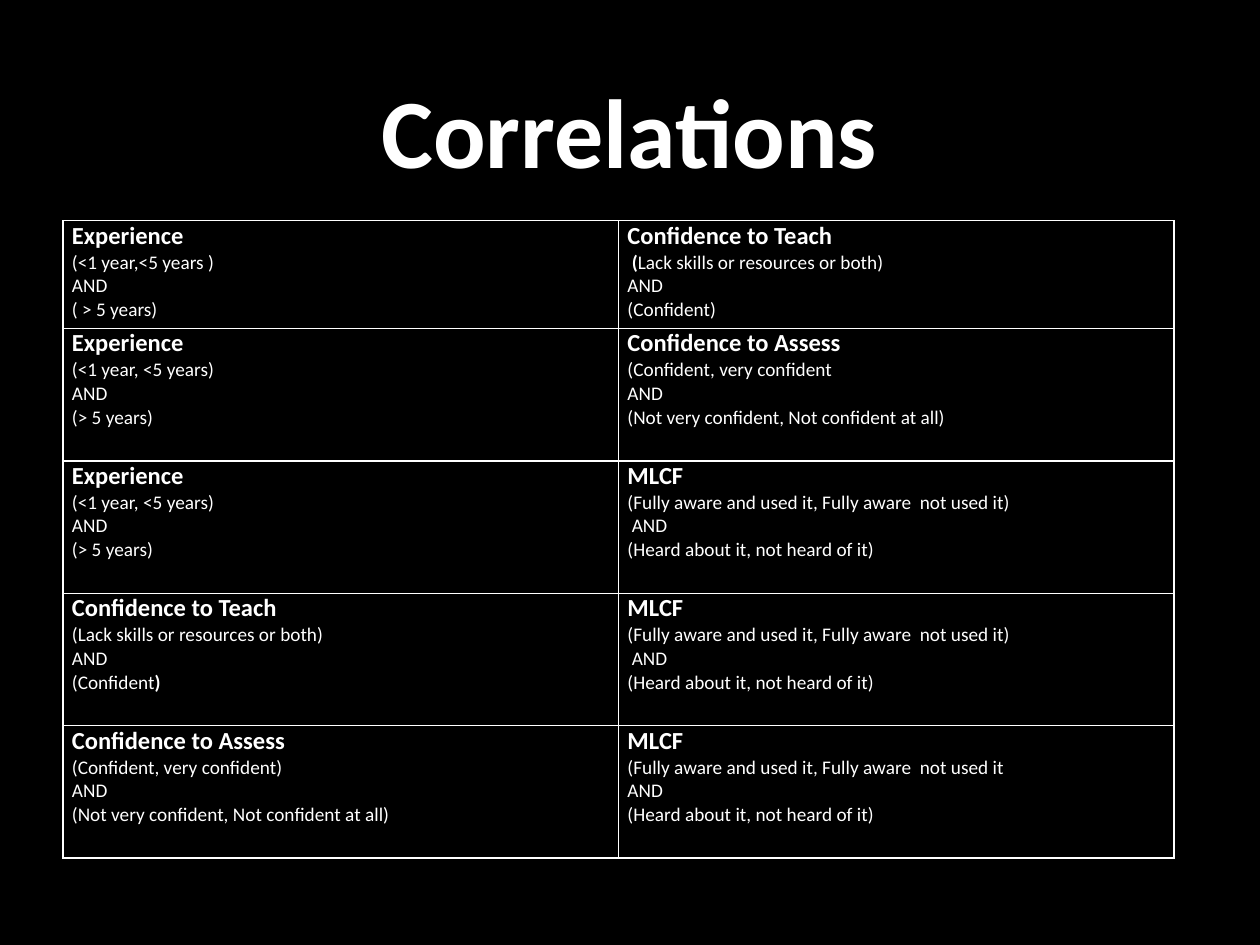
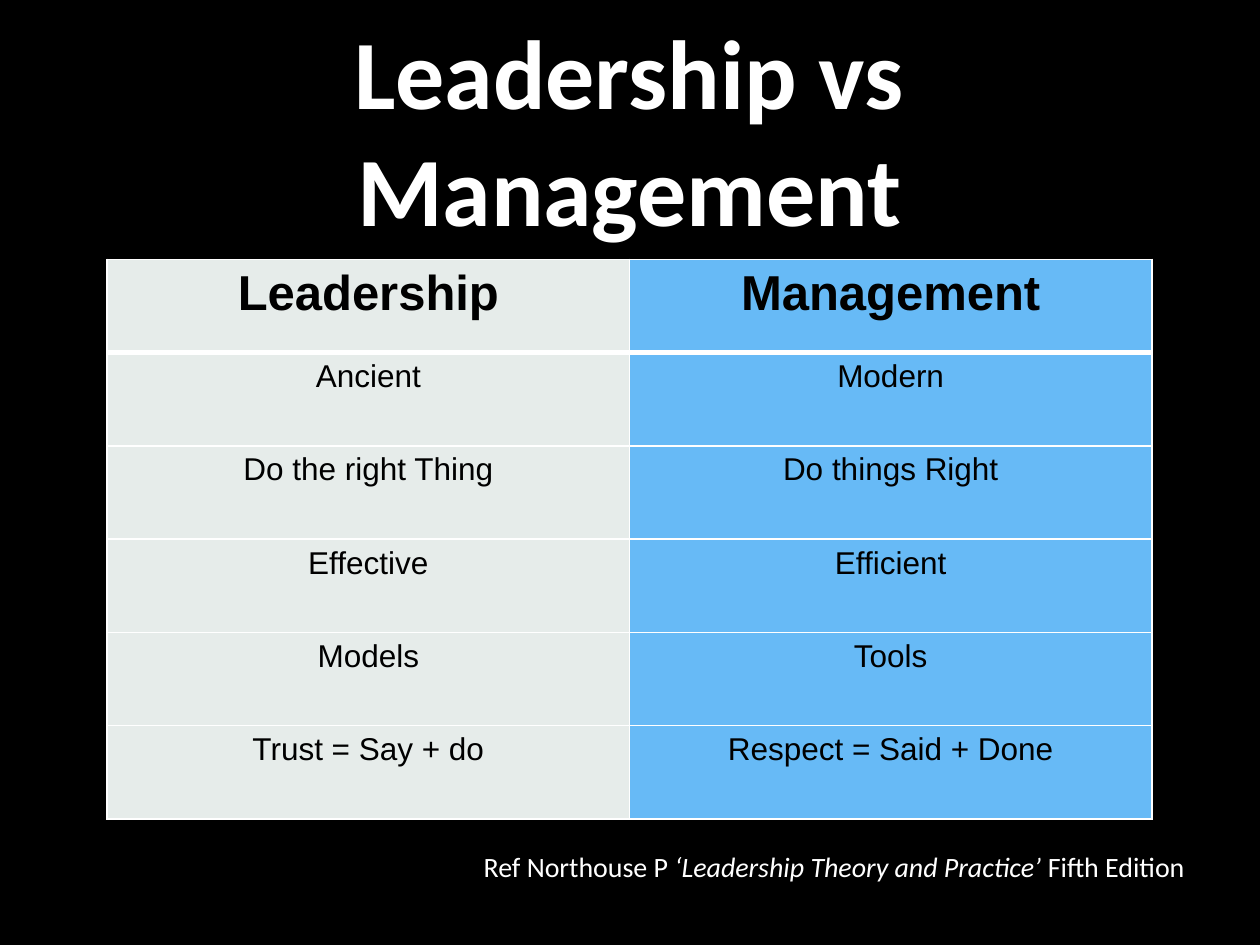
from pptx import Presentation
from pptx.dml.color import RGBColor
from pptx.enum.text import MSO_ANCHOR, PP_ALIGN
from pptx.oxml import parse_xml
from pptx.oxml.ns import nsdecls
from pptx.util import Cm, Pt

# Shared style
BLACK, WHITE = "000000", "FFFFFF"
COLUMN_FILLS = ["E6ECEA", "67BAF6"]

# Content: each correlation cell is a heading and its lines;
# a line is a string, or a list of (text, bold) pieces
EXPERIENCE = ["Experience", "(<1 year, <5 years)", "AND", "(> 5 years)"]
MLCF = ["MLCF", "(Fully aware and used it, Fully aware  not used it)", " AND",
        "(Heard about it, not heard of it)"]
CORRELATIONS = [
    (["Experience", "(<1 year,<5 years )", "AND", "( > 5 years)"],
     ["Confidence to Teach",
      [(" (", True), ("Lack skills or resources or both)", False)],
      "AND", "(Confident)"]),
    (EXPERIENCE,
     ["Confidence to Assess", "(Confident, very confident", "AND",
      "(Not very confident, Not confident at all)"]),
    (EXPERIENCE, MLCF),
    (["Confidence to Teach", "(Lack skills or resources or both)", "AND",
      [("(Confident", False), (")", True)]],
     MLCF),
    (["Confidence to Assess", "(Confident, very confident)", "AND",
      "(Not very confident, Not confident at all)"],
     ["MLCF", "(Fully aware and used it, Fully aware  not used it", "AND",
      "(Heard about it, not heard of it)"]),
]
COMPARISON = [
    ("Leadership", "Management"),
    ("Ancient", "Modern"),
    ("Do the right Thing", "Do things Right"),
    ("Effective", "Efficient"),
    ("Models", "Tools"),
    ("Trust = Say + do", "Respect = Said + Done"),
]
REFERENCE = [("Ref Northouse P ", False),
             ("‘Leadership Theory and Practice’ ", True),
             ("Fifth Edition", False)]


def color(hex_code):
    return RGBColor.from_string(hex_code)


def add_run(paragraph, text, size, font="Calibri", ink=WHITE, bold=False, italic=False):
    run = paragraph.add_run()
    run.text = text
    run.font.size, run.font.name = Pt(size), font
    run.font.bold, run.font.italic = bold, italic
    run.font.color.rgb = color(ink)


def add_titled_slide(deck, title):
    slide = deck.slides.add_slide(deck.slide_layouts[6])
    slide.background.fill.solid()
    slide.background.fill.fore_color.rgb = color(BLACK)
    frame = slide.shapes.add_textbox(Cm(2.16), Cm(0.3), Cm(21.06), Cm(4.6)).text_frame
    frame.word_wrap = True
    frame.vertical_anchor = MSO_ANCHOR.MIDDLE
    paragraph = frame.paragraphs[0]
    paragraph.alignment = PP_ALIGN.CENTER
    add_run(paragraph, title, 56, bold=True)
    return slide


def add_grid(slide, left, top, column_width, row_heights):
    table = slide.shapes.add_table(len(row_heights), 2, left, top,
                                   2 * column_width, sum(row_heights)).table
    table.first_row = table.horz_banding = False
    for column in table.columns:
        column.width = column_width
    for row, height in zip(table.rows, row_heights):
        row.height = height
    return table


def set_margins(cell, side, end):
    cell.margin_left = cell.margin_right = Cm(side)
    cell.margin_top = cell.margin_bottom = Cm(end)


def set_borders(cell, top=1, bottom=1):
    """Draw white borders; the line elements go before the cell fill."""
    widths = {"lnL": 1, "lnR": 1, "lnT": top, "lnB": bottom}
    for place, (edge, width) in enumerate(widths.items()):
        line = parse_xml(
            f'<a:{edge} {nsdecls("a")} w="{Pt(width)}"><a:solidFill>'
            f'<a:srgbClr val="{WHITE}"/></a:solidFill></a:{edge}>')
        cell._tc.get_or_add_tcPr().insert(place, line)


def build_correlations(deck):
    slide = add_titled_slide(deck, "Correlations")
    heights = [Cm(2.17)] + [Cm(2.67)] * (len(CORRELATIONS) - 1)
    table = add_grid(slide, Cm(1.27), Cm(4.45), Cm(11.2), heights)
    for r, pair in enumerate(CORRELATIONS):
        for c, (heading, *lines) in enumerate(pair):
            cell = table.cell(r, c)
            set_margins(cell, 0.18, 0)
            cell.fill.background()
            set_borders(cell)
            frame = cell.text_frame
            add_run(frame.paragraphs[0], heading, 14, bold=True)
            for line in lines:
                paragraph = frame.add_paragraph()
                pieces = [(line, False)] if isinstance(line, str) else line
                for text, bold in pieces:
                    add_run(paragraph, text, 11, bold=bold)


def build_comparison(deck):
    slide = add_titled_slide(deck, "Leadership vs Management")
    table = add_grid(slide, Cm(2.16), Cm(5.23), Cm(10.53), [Cm(1.88)] * len(COMPARISON))
    for r, pair in enumerate(COMPARISON):
        header = r == 0
        for c, text in enumerate(pair):
            cell = table.cell(r, c)
            set_margins(cell, 0.24, 0.13)
            cell.fill.solid()
            cell.fill.fore_color.rgb = color(COLUMN_FILLS[c])
            set_borders(cell, top=3 if r == 1 else 1, bottom=3 if header else 1)
            paragraph = cell.text_frame.paragraphs[0]
            paragraph.alignment = PP_ALIGN.CENTER
            add_run(paragraph, text, 28 if header else 18, "Arial", BLACK, bold=header)

    # Reference line
    frame = slide.shapes.add_textbox(Cm(9.3), Cm(17), Cm(14.83), Cm(0.94)).text_frame
    frame.word_wrap = False
    paragraph = frame.paragraphs[0]
    paragraph.alignment = PP_ALIGN.RIGHT
    for text, italic in REFERENCE:
        add_run(paragraph, text, 16, italic=italic)


def main():
    deck = Presentation()
    deck.slide_width, deck.slide_height = Cm(25.4), Cm(19.05)
    build_correlations(deck)
    build_comparison(deck)
    deck.save("out.pptx")


if __name__ == "__main__":
    main()
